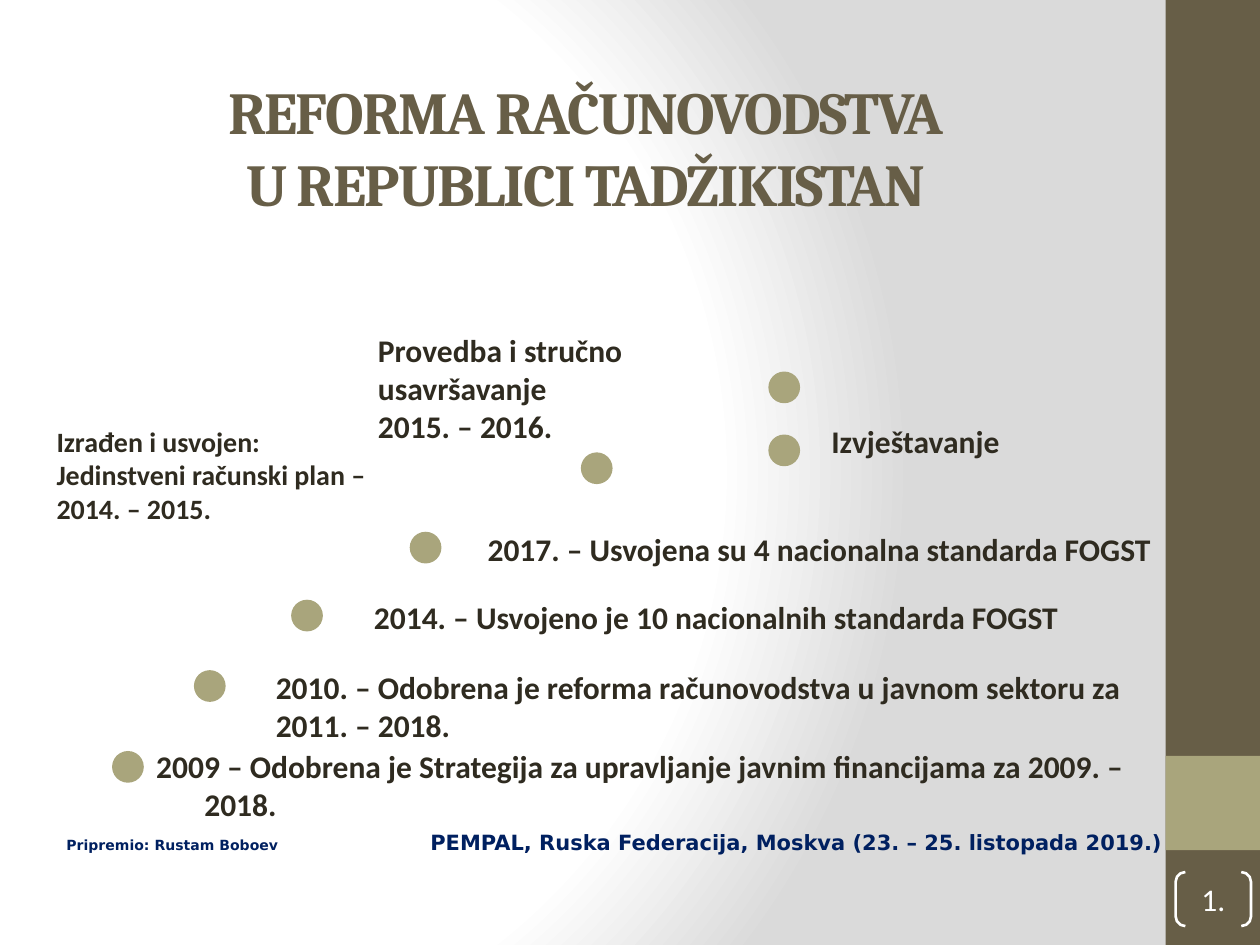
import pptx
import pptx.util
import pptx.dml.color
import pptx.enum.shapes
import pptx.enum.text
import pptx.oxml
import pptx.oxml.ns

Cm = pptx.util.Cm
Pt = pptx.util.Pt
MSO = pptx.enum.shapes.MSO_SHAPE
ALIGN = pptx.enum.text.PP_ALIGN
ANCHOR = pptx.enum.text.MSO_ANCHOR
FIT = pptx.enum.text.MSO_AUTO_SIZE

BROWN, OLIVE, DARK, NAVY, WHITE = "675E47", "A9A57C", "2F2B20", "002060", "FFFFFF"
GRADIENT = [(0, WHITE), (75, WHITE), (100, "DADADA")]

TITLE_FONT = dict(name="Cambria", size=Pt(34), bold=True)
STEP_FONT = dict(name="Calibri", size=Pt(18), bold=True)
SMALL_STEP_FONT = dict(STEP_FONT, size=Pt(16))
AUTHOR_FONT = dict(name="DejaVu Sans", size=Pt(8), bold=True)
EVENT_FONT = dict(AUTHOR_FONT, size=Pt(12))
NUMBER_FONT = dict(name="Calibri", size=Pt(18), bold=False)

TITLE = "REFORMA RAČUNOVODSTVA\nU REPUBLICI TADŽIKISTAN"
FIRST_YEAR = 2009
FIRST_STEP = " – Odobrena je Strategija za upravljanje javnim financijama za 2009. – 2018."

# paragraphs, (left, top, width, height) in cm, font
STEPS = [
    (["2010. – Odobrena je reforma računovodstva u javnom sektoru za 2011. – 2018."],
     (5.31, 13.34, 17.81, 1.02), STEP_FONT),
    (["2014. – Usvojeno je 10 nacionalnih standarda FOGST"],
     (7.29, 11.94, 17.02, 1.02), STEP_FONT),
    (["2017. – Usvojena su 4 nacionalna standarda FOGST"],
     (9.58, 10.57, 15.34, 1.02), STEP_FONT),
    (["Izrađen i usvojen:", "Jedinstveni računski plan –", "2014. – 2015."],
     (0.89, 8.43, 7.21, 2.29), SMALL_STEP_FONT),
    (["Provedba i stručno usavršavanje", "2015. – 2016."],
     (7.37, 6.55, 8.23, 1.8), STEP_FONT),
    (["Izvještavanje"], (16.51, 8.38, 10.03, 1.02), STEP_FONT),
]
DOT = 0.64
DOTS = [(2.26, 15.14), (3.91, 13.51), (5.87, 12.09), (8.26, 10.72),
        (11.71, 9.12), (15.49, 7.49), (15.49, 8.76)]
BARS = [((23.5, 0, 1.9, 19.05), BROWN), ((23.5, 15.24, 1.9, 1.9), OLIVE)]


def rgb(value):
    return pptx.dml.color.RGBColor.from_string(value)


def set_background(s):
    """Circular gradient, centred left of the middle."""
    s.background.fill.solid()
    stops = "".join(f'<a:gs pos="{pos * 1000}"><a:srgbClr val="{color}"/></a:gs>'
                    for pos, color in GRADIENT)
    grad = pptx.oxml.parse_xml(
        f'<a:gradFill {pptx.oxml.ns.nsdecls("a")} rotWithShape="1"><a:gsLst>{stops}</a:gsLst>'
        '<a:path path="circle"><a:fillToRect l="20000" t="50000" r="100000" b="50000"/>'
        '</a:path></a:gradFill>')
    solid = s.element.find(".//" + pptx.oxml.ns.qn("p:bgPr"))[0]
    solid.getparent().replace(solid, grad)


def add_shape(s, kind, box, fill=None):
    sp = s.shapes.add_shape(kind, *map(Cm, box))
    sp.shadow.inherit = False
    sp.line.fill.background()
    if fill:
        sp.fill.solid()
        sp.fill.fore_color.rgb = rgb(fill)
    else:
        sp.fill.background()
    return sp


def write(tf, lines, font, color, align=ALIGN.LEFT):
    for i, line in enumerate(lines):
        p = tf.add_paragraph() if i else tf.paragraphs[0]
        p.text = line
        p.alignment = align
        for r in p.runs:
            for key, value in font.items():
                setattr(r.font, key, value)
            r.font.color.rgb = rgb(color)


def add_text(s, lines, box, font, color=DARK, align=ALIGN.LEFT, fit=FIT.SHAPE_TO_FIT_TEXT):
    tf = s.shapes.add_textbox(*map(Cm, box)).text_frame
    tf.word_wrap = True
    tf.auto_size = fit
    write(tf, lines, font, color, align)
    return tf


def number_from(p, start, indent):
    ppr = p._p.get_or_add_pPr()
    ppr.set("marL", str(Cm(indent)))
    ppr.set("indent", str(-Cm(indent)))
    ppr.append(pptx.oxml.parse_xml(
        f'<a:buAutoNum {pptx.oxml.ns.nsdecls("a")} type="arabicPlain" startAt="{start}"/>'))


def main():
    prs = pptx.Presentation()
    prs.slide_width, prs.slide_height = Cm(25.4), Cm(19.05)
    s = prs.slides.add_slide(prs.slide_layouts[6])
    set_background(s)
    for box, color in BARS:
        add_shape(s, MSO.RECTANGLE, box, color)

    tf = add_text(s, [TITLE], (0.51, 0.91, 22.61, 3.61), TITLE_FONT, BROWN,
                  ALIGN.CENTER, FIT.NONE)
    tf.vertical_anchor = ANCHOR.BOTTOM
    for r in tf.paragraphs[0].runs:
        r.font._element.set("spc", "-100")

    tf = add_text(s, [FIRST_STEP], (2.9, 14.94, 20.55, 1.02), STEP_FONT)
    number_from(tf.paragraphs[0], FIRST_YEAR, 0.97)
    for lines, box, font in STEPS:
        add_text(s, lines, box, font)
    for left, top in DOTS:
        add_shape(s, MSO.FLOWCHART_CONNECTOR, (left, top, DOT, DOT), OLIVE)

    add_text(s, ["Pripremio: Rustam Boboev"], (1.09, 16.74, 5.61, 0.58), AUTHOR_FONT, NAVY)
    add_text(s, ["PEMPAL, Ruska Federacija, Moskva (23. – 25. listopada 2019.)"],
             (6.88, 16.59, 16.81, 0.76), EVENT_FONT, NAVY, ALIGN.RIGHT)

    sp = add_shape(s, MSO.DOUBLE_BRACKET, (23.7, 17.58, 1.52, 1.09))
    sp.adjustments[0] = 0.18
    sp.line.color.rgb = rgb(WHITE)
    sp.line.width = Pt(1.5)
    tf = sp.text_frame
    for side in ("left", "top", "right", "bottom"):
        setattr(tf, f"margin_{side}", 0)
    tf.vertical_anchor = ANCHOR.MIDDLE
    write(tf, ["1."], NUMBER_FONT, WHITE, ALIGN.CENTER)

    prs.save("out.pptx")


if __name__ == "__main__":
    main()
